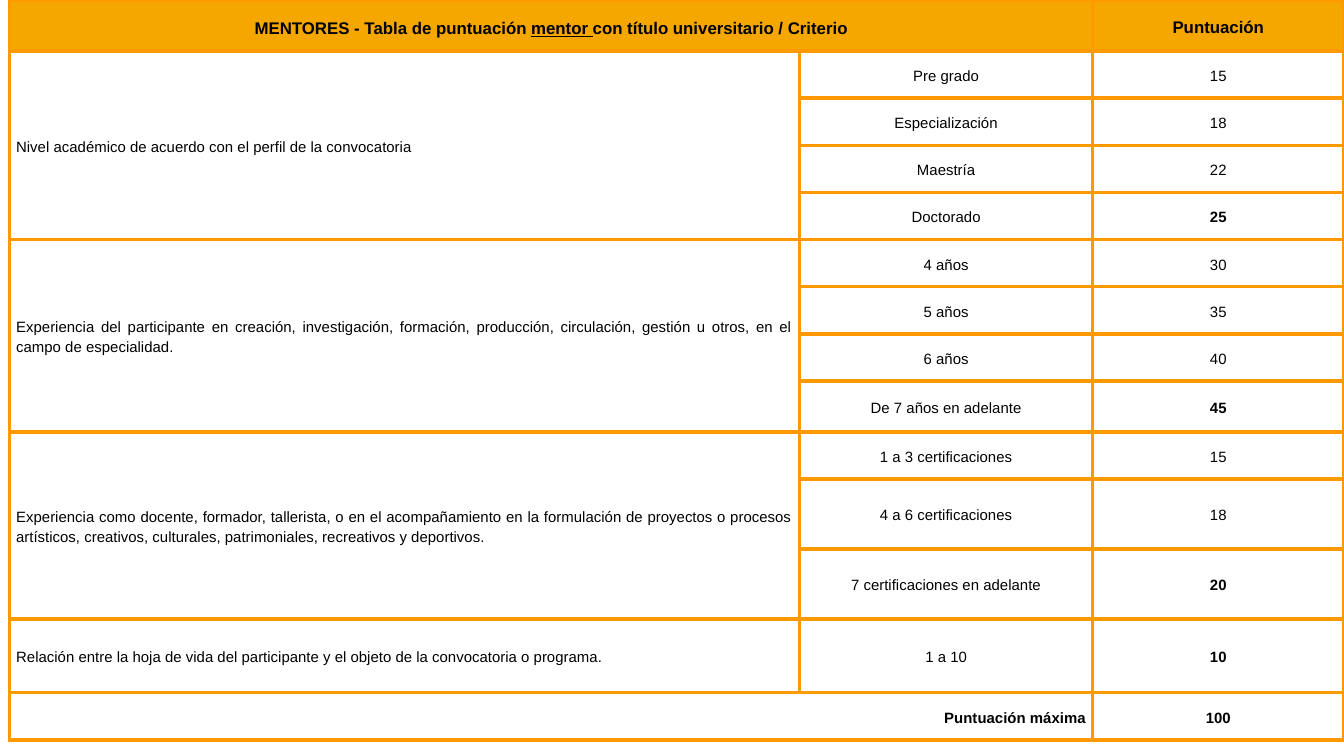
from lxml import etree
from pptx import Presentation
from pptx.dml.color import RGBColor
from pptx.enum.text import MSO_ANCHOR, PP_ALIGN
from pptx.oxml.ns import qn
from pptx.util import Inches, Pt

MID = MSO_ANCHOR.MIDDLE
FULL, RIGHT = PP_ALIGN.JUSTIFY, PP_ALIGN.RIGHT
CENTER = PP_ALIGN.CENTER
COLORS = {"head": "F5A700", "line": "FF9900", "text": "000000"}
FONT = "Arial"

COLS = [5.88, 2.18, 1.87]
ROWS = [0.22, 0.31, 0.22, 0.22, 0.22, 0.21, 0.22, 0.22, 0.38,
        0.34, 0.52, 0.52, 0.55, 0.2]
TITLE = [("MENTORES - Tabla de puntuación ", False), ("mentor ", True),
         ("con título universitario / Criterio", False)]
# Each criterion with its levels; the last level holds the top score.
GROUPS = [
    ("Nivel académico de acuerdo con el perfil de la convocatoria",
     [("Pre grado", 15), ("Especialización", 18), ("Maestría", 22),
      ("Doctorado", 25)]),
    ("Experiencia del participante en creación, investigación, formación, "
     "producción, circulación, gestión u otros, en el campo de "
     "especialidad. ",
     [("4 años", 30), ("5 años", 35), ("6 años", 40),
      ("De 7 años en adelante", 45)]),
    ("Experiencia como docente, formador, tallerista, o en el acompañamiento "
     "en la formulación de proyectos o procesos artísticos, creativos, "
     "culturales, patrimoniales, recreativos y deportivos.",
     [("1 a 3 certificaciones", 15), ("4 a 6 certificaciones", 18),
      ("7 certificaciones en adelante", 20)]),
    ("Relación entre la hoja de vida del participante y el objeto de la "
     "convocatoria o programa. ", [("1 a 10", 10)]),
]


def rgb(name):
    return RGBColor.from_string(COLORS[name])


def add_edges(cell):
    """Draw the four borders, which must come before the cell's fill."""
    props = cell._tc.get_or_add_tcPr()
    for pos, side in enumerate(("a:lnL", "a:lnR", "a:lnT", "a:lnB")):
        line = etree.Element(qn(side), w=str(Pt(2.25)))
        fill = etree.SubElement(line, qn("a:solidFill"))
        etree.SubElement(fill, qn("a:srgbClr"), val=COLORS["line"])
        props.insert(pos, line)


def style_cell(cell, head):
    cell.vertical_anchor = MID
    cell.margin_left = cell.margin_right = Inches(0.05)
    cell.margin_top = cell.margin_bottom = Inches(0.1)
    if head:
        cell.fill.solid()
        cell.fill.fore_color.rgb = rgb("head")
    else:
        cell.fill.background()
    add_edges(cell)


def write(cell, runs, align=CENTER, size=8, bold=False, space=1.2):
    """Fill a cell with runs, given as (text, underlined) pairs."""
    para = cell.text_frame.paragraphs[0]
    para.alignment = align
    para.line_spacing = space
    for text, under in runs:
        run = para.add_run()
        run.text = text
        font = run.font
        font.name, font.size, font.bold = FONT, Pt(size), bold
        font.underline = under
        font.color.rgb = rgb("text")
    return para


def add_grid(slide):
    frame = slide.shapes.add_table(
        len(ROWS), len(COLS), Inches(0.07), Inches(0),
        Inches(sum(COLS)), Inches(sum(ROWS)))
    table = frame.table
    table.first_row = table.horz_banding = False
    for col, width in zip(table.columns, COLS):
        col.width = Inches(width)
    for num, (row, height) in enumerate(zip(table.rows, ROWS)):
        row.height = Inches(height)
        for cell in row.cells:
            style_cell(cell, num == 0)
    return table


def add_head(table):
    table.cell(0, 0).merge(table.cell(0, 1))
    para = write(table.cell(0, 0), TITLE, size=9, bold=True, space=1.29)
    para.space_after = Pt(8)
    write(table.cell(0, 2), [("Puntuación", False)], size=9, bold=True)


def add_group(table, top, name, levels):
    """Write one criterion and its levels; return the next free row."""
    end = top + len(levels)
    if len(levels) > 1:
        table.cell(top, 0).merge(table.cell(end - 1, 0))
    write(table.cell(top, 0), [(name, False)], FULL)
    for row, (level, score) in enumerate(levels, top):
        write(table.cell(row, 1), [(level, False)])
        write(table.cell(row, 2), [(str(score), False)], bold=row == end - 1)
    return end


def add_total(table, row):
    total = sum(levels[-1][1] for _, levels in GROUPS)
    table.cell(row, 0).merge(table.cell(row, 1))
    write(table.cell(row, 0), [("Puntuación máxima", False)], RIGHT, bold=True)
    write(table.cell(row, 2), [(str(total), False)], bold=True)


def main():
    deck = Presentation()
    deck.slide_width = Inches(10)
    deck.slide_height = Inches(10) * 9 // 16
    slide = deck.slides.add_slide(deck.slide_layouts[6])
    table = add_grid(slide)
    add_head(table)
    row = 1
    for name, levels in GROUPS:
        row = add_group(table, row, name, levels)
    add_total(table, row)
    deck.save("out.pptx")


if __name__ == "__main__":
    main()
